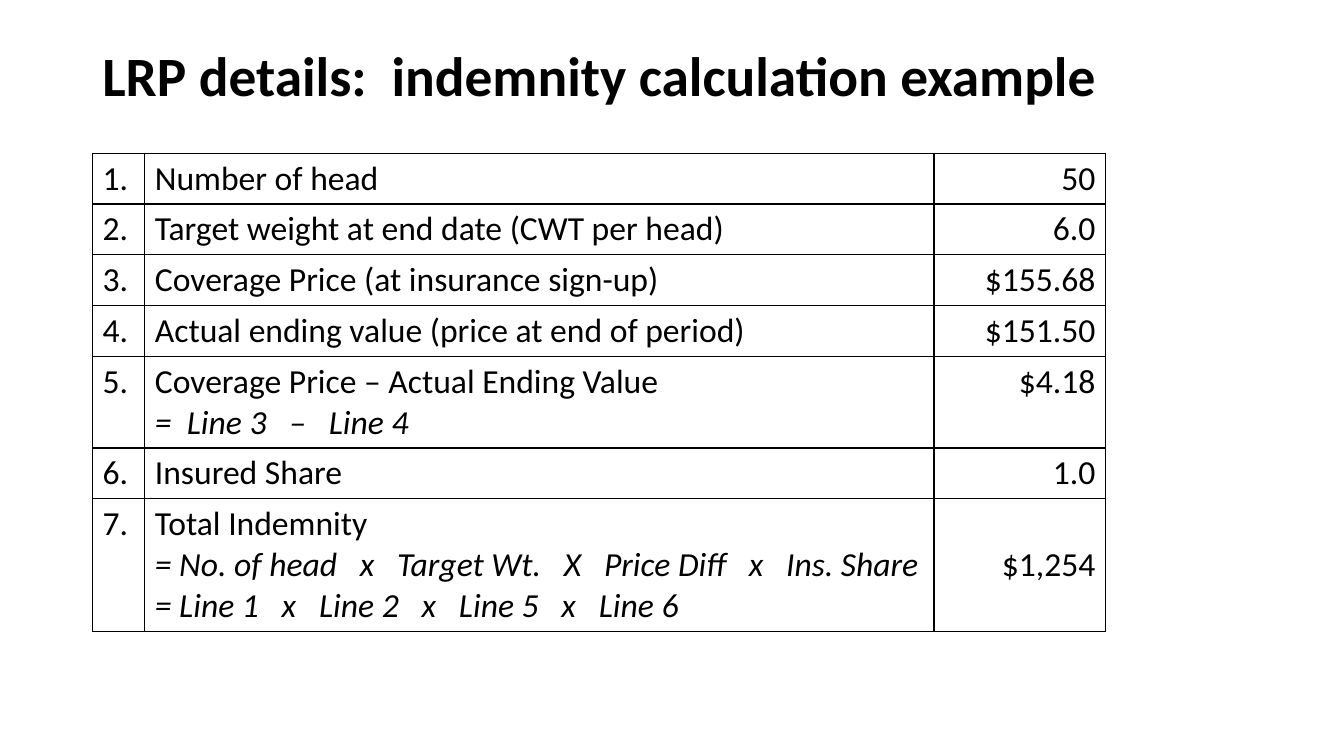
"""Build the LRP indemnity calculation slide."""
from lxml import etree
from pptx import Presentation
from pptx import util as u
from pptx.dml.color import RGBColor
from pptx.enum import text
from pptx.oxml.ns import qn

TITLE = "LRP details:  indemnity calculation example"
ROWS = [
    (["Number of head"], "50"),
    (["Target weight at end date (CWT per head)"], "6.0"),
    (["Coverage Price (at insurance sign-up)"], "$155.68"),
    (["Actual ending value (price at end of period)"], "$151.50"),
    (["Coverage Price – Actual Ending Value", "=  Line 3   –   Line 4"], "$4.18"),
    (["Insured Share"], "1.0"),
    (["Total Indemnity",
      "= No. of head   x   Target Wt.   X   Price Diff   x   Ins. Share",
      "= Line 1   x   Line 2   x   Line 5   x   Line 6"], "$1,254"),
]
BLACK = RGBColor(0, 0, 0)
LEFT, TITLE_TOP, TITLE_W, TITLE_H = 2.33, 1.01, 29.21, 1.93
TABLE_TOP = 3.86
COL_W = [1.32, 19.89, 4.32]
LINE_H, PAD = 1.03, 0.25
TITLE_FONT = {"name": "Calibri", "size": u.Pt(39.6), "bold": True}
BODY_FONT = {"name": "Calibri", "size": u.Pt(24), "bold": False}


def write(p, line, fmt):
    r = p.add_run()
    r.text = line
    for key, value in fmt.items():
        setattr(r.font, key, value)
    r.font.color.rgb = BLACK


def fill_cell(cell, lines, align):
    tf = cell.text_frame
    for i, line in enumerate(lines):
        p = tf.add_paragraph() if i else tf.paragraphs[0]
        p.alignment = align
        write(p, line, {**BODY_FONT, "italic": i > 0})
    tc_pr = cell._tc.get_or_add_tcPr()
    for side in ("lnL", "lnR", "lnT", "lnB"):
        ln = etree.SubElement(tc_pr, qn(f"a:{side}"), w=str(u.Pt(1)))
        solid = etree.SubElement(ln, qn("a:solidFill"))
        etree.SubElement(solid, qn("a:srgbClr"), val=str(BLACK))
    cell.fill.background()


def add_title(s):
    sp = s.shapes.add_textbox(u.Cm(LEFT), u.Cm(TITLE_TOP), u.Cm(TITLE_W), u.Cm(TITLE_H))
    tf = sp.text_frame
    tf.word_wrap = True
    tf.vertical_anchor = text.MSO_ANCHOR.MIDDLE
    p = tf.paragraphs[0]
    p.line_spacing = 0.9
    write(p, TITLE, TITLE_FONT)


def add_indemnity_table(s):
    heights = [LINE_H * len(lines) + PAD for lines, _ in ROWS]
    table = s.shapes.add_table(len(ROWS), len(COL_W), u.Cm(LEFT), u.Cm(TABLE_TOP),
                               u.Cm(sum(COL_W)), u.Cm(sum(heights))).table
    table.first_row = table.horz_banding = False
    for col, width in zip(table.columns, COL_W):
        col.width = u.Cm(width)
    for i, (lines, value) in enumerate(ROWS):
        table.rows[i].height = u.Cm(heights[i])
        fill_cell(table.cell(i, 0), [f"{i + 1}."], text.PP_ALIGN.LEFT)
        fill_cell(table.cell(i, 1), lines, text.PP_ALIGN.LEFT)
        fill_cell(table.cell(i, 2), [value], text.PP_ALIGN.RIGHT)
    table.cell(len(ROWS) - 1, 2).vertical_anchor = text.MSO_ANCHOR.MIDDLE


def main():
    prs = Presentation()
    prs.slide_width, prs.slide_height = u.Cm(33.87), u.Cm(19.05)
    s = prs.slides.add_slide(prs.slide_layouts[6])
    add_title(s)
    add_indemnity_table(s)
    prs.save("out.pptx")


if __name__ == "__main__":
    main()
